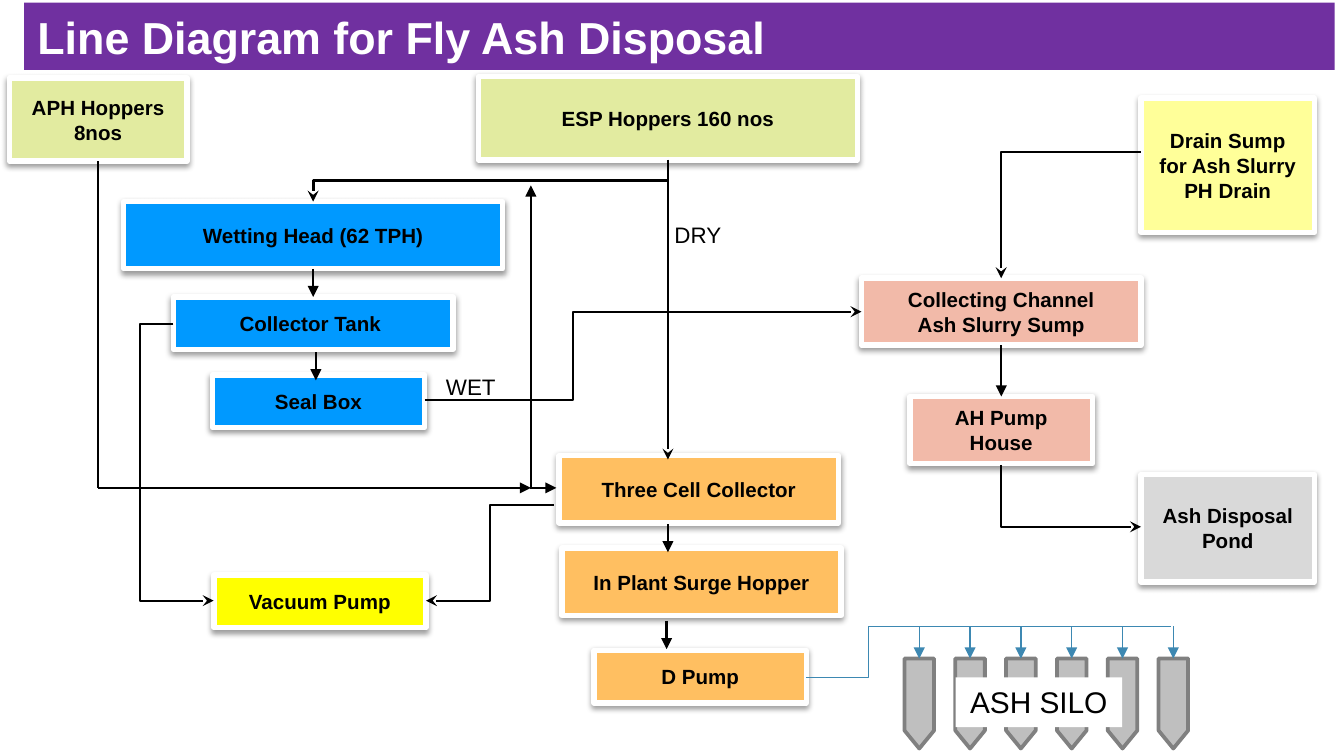
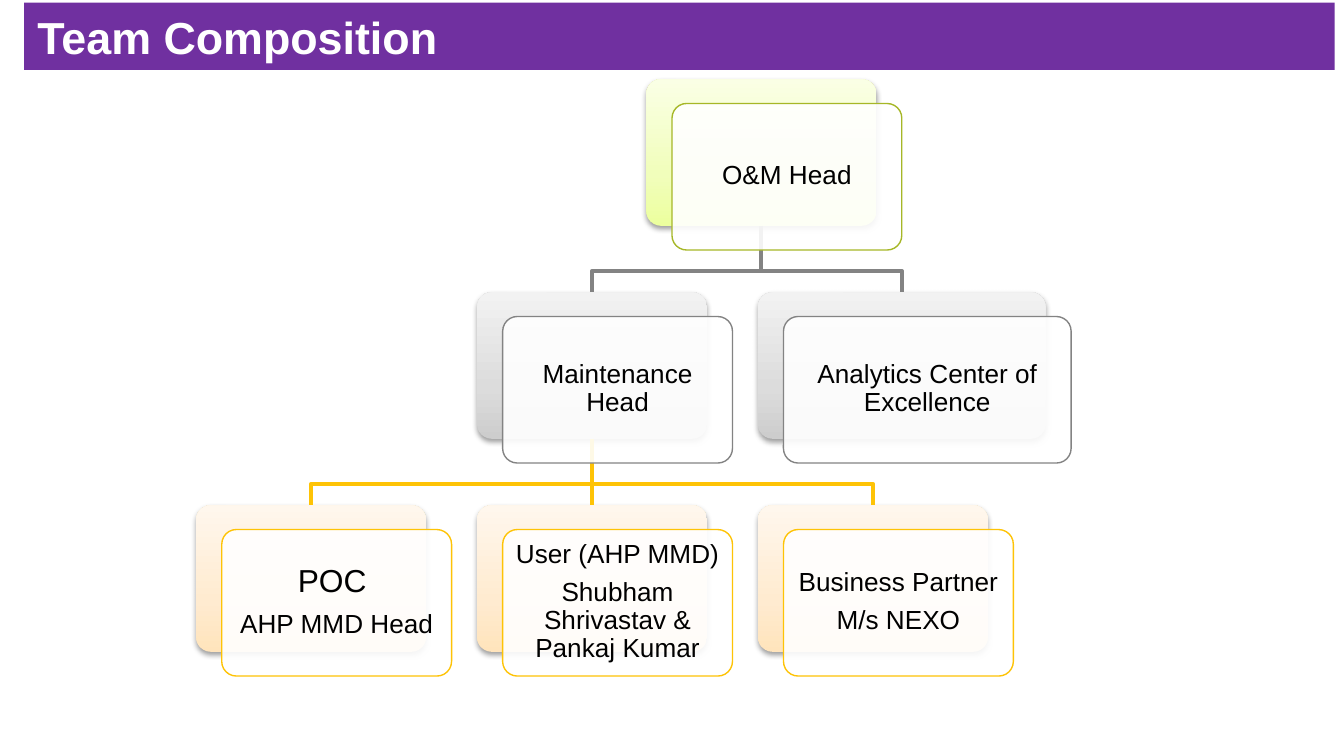
from copy import deepcopy
from dataclasses import dataclass
from typing import Any, NamedTuple, Optional

from lxml.etree import SubElement
from pptx import Presentation
from pptx.dml.color import RGBColor
from pptx.enum.shapes import MSO_CONNECTOR as Link, MSO_SHAPE as Preset
from pptx.enum.text import MSO_ANCHOR as Anchor, PP_ALIGN as Align
from pptx.oxml.ns import qn
from pptx.util import Inches, Pt

FONT = "Arial"
BLACK, WHITE, PURPLE = "000000", "FFFFFF", "7030A0"
BLUE, ORANGE, PINK, GREEN = "0099FF", "FFBF61", "F2BAA9", "E2EBA0"
YELLOW, PALE_YELLOW, GRAY = "FFFF00", "FFFF99", "D9D9D9"
STEEL, SILO_FILL, SILO_EDGE = "3D88B2", "BFBFBF", "808080"

Point = tuple[float, float]
Area = tuple[float, float, float, float]


class Box(NamedTuple):
    lines: tuple[str, ...]
    area: Area
    fill: str


class Arrow(NamedTuple):
    start: Point
    end: Point
    width: float = 1.25
    head: Optional[str] = "triangle"
    color: str = BLACK
    source: Optional[str] = None
    target: Optional[str] = None


class Elbow(NamedTuple):
    """A bent arrow; without a bend fraction it turns only once."""
    start: Point
    end: Point
    bend: Optional[float] = None
    vertical: bool = False
    width: float = 1
    head: Optional[str] = "stealth"
    color: str = BLACK


class Theme(NamedTuple):
    edge: str
    gradient: tuple[str, str, str]


@dataclass
class Card:
    lines: tuple[str, ...]
    left: float
    top: float
    theme: Theme
    parent: Optional[int] = None
    width: float = 1.71
    first_size: float = 14
    height: float = 1.09

    @property
    def middle(self) -> float:
        return self.left + self.width / 2


BOXES = [
    Box(("APH Hoppers 8nos",), (0.07, 0.58, 1.32, 0.62), GREEN),
    Box(("ESP Hoppers 160 nos",), (3.56, 0.57, 2.82, 0.62), GREEN),
    Box(("Wetting Head (62 TPH)",), (0.92, 1.5, 2.82, 0.5), BLUE),
    Box(("Collector Tank ",), (1.29, 2.21, 2.08, 0.39), BLUE),
    Box(("Seal Box",), (1.58, 2.79, 1.58, 0.39), BLUE),
    Box(("Three Cell Collector",), (4.16, 3.39, 2.08, 0.5), ORANGE),
    Box(("In Plant Surge Hopper",), (4.18, 4.08, 2.08, 0.5), ORANGE),
    Box(("D Pump",), (4.42, 4.84, 1.58, 0.39), ORANGE),
    Box(("Vacuum Pump",), (1.59, 4.28, 1.58, 0.39), YELLOW),
    Box(("Collecting Channel", "Ash Slurry Sump"), (6.41, 2.07, 2.08, 0.5), PINK),
    Box(("AH Pump House",), (6.77, 2.95, 1.36, 0.5), PINK),
    Box(("Ash Disposal Pond",), (8.49, 3.53, 1.29, 0.8), GRAY),
    Box(("Drain Sump for Ash Slurry PH Drain",), (8.49, 0.73, 1.29, 1), PALE_YELLOW),
]
ARROWS = [
    Arrow((2.33, 2), (2.33, 2.21), source="Wetting Head (62 TPH)", target="Collector Tank "),
    Arrow((2.35, 2.62), (2.35, 2.83)),
    Arrow((4.97, 3.9), (4.97, 4.11)),
    Arrow((4.96, 4.62), (4.96, 4.83)),
    Arrow((7.45, 2.57), (7.45, 2.95), source="Collecting Channel", target="AH Pump House"),
    Arrow((4.97, 1.19), (4.97, 3.42), 1.5, "stealth", source="ESP Hoppers 160 nos"),
    Arrow((3.95, 3.64), (3.95, 1.38)),
    Arrow((0.73, 1.2), (0.73, 3.63), 0.75, None, source="APH Hoppers 8nos"),
    Arrow((0.73, 3.63), (3.95, 3.63), 0.75),
    Arrow((3.95, 3.63), (4.14, 3.63), 0.75),
]
ELBOWS = [
    Elbow((4.97, 1.19), (2.33, 1.5), 0.5, vertical=True, width=1.5),
    Elbow((1.29, 2.41), (1.59, 4.47), -0.83),
    Elbow((4.12, 3.76), (3.17, 4.47), 0.5),
    Elbow((3.16, 2.98), (6.41, 2.32), 0.34),
    Elbow((8.49, 1.13), (7.45, 2.07)),
    Elbow((7.45, 3.46), (8.49, 3.92), vertical=True),
    Elbow((6, 5.04), (8.71, 4.66), 0.17, width=0.75, head=None, color=STEEL),
]
SILO_COUNT, SILO_LEFT, SILO_LAST, SILO_TOP, SILO_WIDTH = 6, 6.73, 8.62, 4.9, 0.22
SILO_PITCH = (SILO_LAST - SILO_LEFT) / (SILO_COUNT - 1)

LIME = Theme("A6B727", ("ECFF9E", "F1FEBB", "FAFFE5"))
SILVER = Theme("838383", ("CDCDCD", "DCDCDC", "F2F2F2"))
AMBER = Theme("FEC306", ("FFE4BC", "FFEBD0", "FFF7ED"))
COLUMNS = [1.46 + 2.09 * column for column in range(3)]
ROWS = [0.59 + 3.17 * row / 2 for row in range(3)]
CARDS = [
    Card(("O&M Head",), 4.81, ROWS[0], LIME),
    Card(("Maintenance Head",), COLUMNS[1], ROWS[1], SILVER, 0),
    Card(("Analytics Center of Excellence",), COLUMNS[2], ROWS[1], SILVER, 0, 2.14),
    Card(("POC ", "AHP MMD Head"), COLUMNS[0], ROWS[2], AMBER, 1, first_size=17),
    Card(("User (AHP MMD)", "Shubham Shrivastav & Pankaj Kumar"), COLUMNS[1], ROWS[2], AMBER, 1),
    Card(("Business Partner", "M/s NEXO"), COLUMNS[2], ROWS[2], AMBER, 1),
]


def rgb(value: str) -> RGBColor:
    return RGBColor.from_string(value)


def assign(target: Any, values: dict[str, Any]) -> None:
    for name, value in values.items():
        setattr(target, name, value)


def set_line(line: Any, color: str, width: float) -> None:
    line.color.rgb = rgb(color)
    line.width = Pt(width)


def add_shape(page: Any, preset: Any, area: Area, fill: Optional[str] = None,
              edge: Optional[str] = None, width: float = 0.75) -> Any:
    shape = page.shapes.add_shape(preset, *map(Inches, area))
    shape.shadow.inherit = False
    if fill:
        shape.fill.solid()
        shape.fill.fore_color.rgb = rgb(fill)
    if edge:
        set_line(shape.line, edge, width)
    else:
        shape.line.fill.background()
    return shape


def cast_shadow(shape: Any) -> None:
    effects = shape.element.spPr.find(qn("a:effectLst"))
    shadow = SubElement(effects, qn("a:outerShdw"), blurRad=str(Pt(3.1)), dist=str(Pt(1.6)),
                        dir="5400000", rotWithShape="0")
    tint = SubElement(shadow, qn("a:srgbClr"), val=BLACK)
    SubElement(tint, qn("a:alpha"), val="38000")


def write(shape: Any, lines: tuple[str, ...], size: float, color: str = BLACK, bold: bool = False,
          align: Any = Align.CENTER, anchor: Any = Anchor.MIDDLE, wrap: bool = True,
          spacing: Optional[dict[str, Any]] = None) -> None:
    frame = shape.text_frame
    assign(frame, {"word_wrap": wrap, "vertical_anchor": anchor})
    for index, text in enumerate(lines):
        para = frame.add_paragraph() if index else frame.paragraphs[0]
        assign(para, {"alignment": align, **(spacing or {})})
        span = para.add_run()
        span.text = text
        assign(span.font, {"name": FONT, "size": Pt(size), "bold": bold})
        span.font.color.rgb = rgb(color)


def add_titled_page(deck: Any, title: str) -> Any:
    page = deck.slides.add_slide(deck.slide_layouts[6])
    band = add_shape(page, Preset.RECTANGLE, (0.18, 0.02, 9.75, 0.5), PURPLE)
    write(band, (title,), 24, WHITE, True, Align.LEFT, Anchor.TOP)
    return page


def add_link(page: Any, kind: Any, start: Point, end: Point, color: str, width: float,
             head: Optional[str] = None) -> Any:
    link = page.shapes.add_connector(kind, *map(Inches, (*start, *end)))
    set_line(link.line, color, width)
    properties = link.element.spPr
    if head:
        SubElement(properties.find(qn("a:ln")), qn("a:tailEnd"), type=head)
    SubElement(properties, qn("a:effectLst"))
    return link


def add_arrow(page: Any, arrow: Arrow, shapes: dict[str, Any]) -> None:
    link = add_link(page, Link.STRAIGHT, arrow.start, arrow.end, arrow.color, arrow.width, arrow.head)
    if arrow.source:
        link.begin_connect(shapes[arrow.source], 2)
    if arrow.target:
        link.end_connect(shapes[arrow.target], 0)


def add_elbow(page: Any, elbow: Elbow) -> None:
    """Draw a bent arrow; one that leaves vertically is laid flat, then turned by 90 degrees."""
    start, end = elbow.start, elbow.end
    if elbow.vertical:
        center_x, center_y = (start[0] + end[0]) / 2, (start[1] + end[1]) / 2
        start, end = [(center_x + y - center_y, center_y - x + center_x) for x, y in (start, end)]
    link = add_link(page, Link.ELBOW, start, end, elbow.color, elbow.width, elbow.head)
    properties = link.element.spPr
    if elbow.vertical:
        properties.find(qn("a:xfrm")).set("rot", "5400000")
    geometry = properties.find(qn("a:prstGeom"))
    if elbow.bend is None:
        geometry.set("prst", "bentConnector2")
    else:
        SubElement(geometry.find(qn("a:avLst")), qn("a:gd"), name="adj1",
                   fmla=f"val {round(elbow.bend * 100000)}")


def add_label(page: Any, text: str, area: Area, wrap: bool = True) -> None:
    label = page.shapes.add_textbox(*map(Inches, area))
    write(label, (text,), 12, align=Align.LEFT, anchor=Anchor.TOP, wrap=wrap)


def add_silos(page: Any) -> None:
    for index in range(SILO_COUNT):
        left = SILO_LEFT + SILO_PITCH * index
        middle = left + SILO_WIDTH / 2
        add_shape(page, Preset.FLOWCHART_OFFPAGE_CONNECTOR, (left, SILO_TOP, SILO_WIDTH, 0.67),
                  SILO_FILL, SILO_EDGE, 2)
        add_link(page, Link.STRAIGHT, (middle, 4.66), (middle, SILO_TOP), STEEL, 0.75, "triangle")
    sign = add_shape(page, Preset.RECTANGLE, (7.11, 5.04, 1.24, 0.37), WHITE)
    write(sign, ("ASH SILO",), 16, anchor=Anchor.TOP)


def build_flow_page(deck: Any) -> None:
    page = add_titled_page(deck, "Line Diagram for Fly Ash Disposal")
    shapes = {}
    for box in BOXES:
        shape = add_shape(page, Preset.RECTANGLE, box.area, box.fill, WHITE, 3)
        cast_shadow(shape)
        write(shape, box.lines, 11, bold=True)
        shapes[box.lines[0]] = shape
    for arrow in ARROWS:
        add_arrow(page, arrow, shapes)
    for elbow in ELBOWS:
        add_elbow(page, elbow)
    add_label(page, "WET", (3.22, 2.73, 0.6, 0.3))
    add_label(page, "DRY", (4.92, 1.6, 0.55, 0.3), wrap=False)
    add_silos(page)


def add_card_back(page: Any, card: Card) -> Any:
    back = add_shape(page, Preset.ROUNDED_RECTANGLE, (card.left, card.top, card.width, card.height))
    back.adjustments[0] = 0.1
    back.fill.gradient()
    back.fill.gradient_angle = 90
    stop_list = back.element.spPr.find(".//" + qn("a:gsLst"))
    stop_list.insert(1, deepcopy(stop_list[0]))
    for stop, position, color in zip(back.fill.gradient_stops, (0, 0.35, 1), card.theme.gradient):
        stop.position = position
        stop.color.rgb = rgb(color)
    cast_shadow(back)
    return back


def add_card_front(page: Any, card: Card) -> None:
    left, top = card.left + 0.19, card.top + 0.18
    front = add_shape(page, Preset.ROUNDED_RECTANGLE, (left, top, card.width, card.height),
                      WHITE, card.theme.edge)
    front.adjustments[0] = 0.1
    SubElement(front.element.spPr.find(".//" + qn("a:srgbClr")), qn("a:alpha"), val="90000")
    area = (left + 0.03, top + 0.03, card.width - 0.06, card.height - 0.07)
    label = page.shapes.add_textbox(*map(Inches, area))
    sides = ("left", "top", "right", "bottom")
    assign(label.text_frame, {f"margin_{side}": Inches(0.06) for side in sides})
    spacing = {"line_spacing": 0.9, "space_after": Pt(0.35 * card.first_size)}
    write(label, card.lines, 14, spacing=spacing)
    label.text_frame.paragraphs[0].runs[0].font.size = Pt(card.first_size)


def add_branch(page: Any, parent: Card, child: Card) -> None:
    """Draw the stepped line from a card down to one that is not straight below it."""
    bend = child.top - 0.16
    corners = [(parent.middle, bend), (child.middle, bend), (child.middle, child.top)]
    builder = page.shapes.build_freeform(Inches(parent.middle), Inches(parent.top + parent.height))
    builder.add_line_segments([(Inches(x), Inches(y)) for x, y in corners], close=False)
    branch = builder.convert_to_shape()
    branch.shadow.inherit = False
    branch.fill.background()
    set_line(branch.line, child.theme.edge, 2)


def build_team_page(deck: Any) -> None:
    page = add_titled_page(deck, "Team Composition")
    backs = [add_card_back(page, card) for card in CARDS]
    for card, back in zip(CARDS, backs):
        if card.parent is None:
            continue
        parent = CARDS[card.parent]
        if parent.left == card.left:
            link = add_link(page, Link.STRAIGHT, (parent.middle, parent.top + parent.height),
                            (card.middle, card.top), card.theme.edge, 2)
            link.begin_connect(backs[card.parent], 2)
            link.end_connect(back, 0)
        else:
            add_branch(page, parent, card)
    for card in CARDS:
        add_card_front(page, card)


def main() -> None:
    deck = Presentation()
    width = Inches(10)
    assign(deck, {"slide_width": width, "slide_height": width * 9 // 16})
    build_flow_page(deck)
    build_team_page(deck)
    deck.save("out.pptx")


if __name__ == "__main__":
    main()
